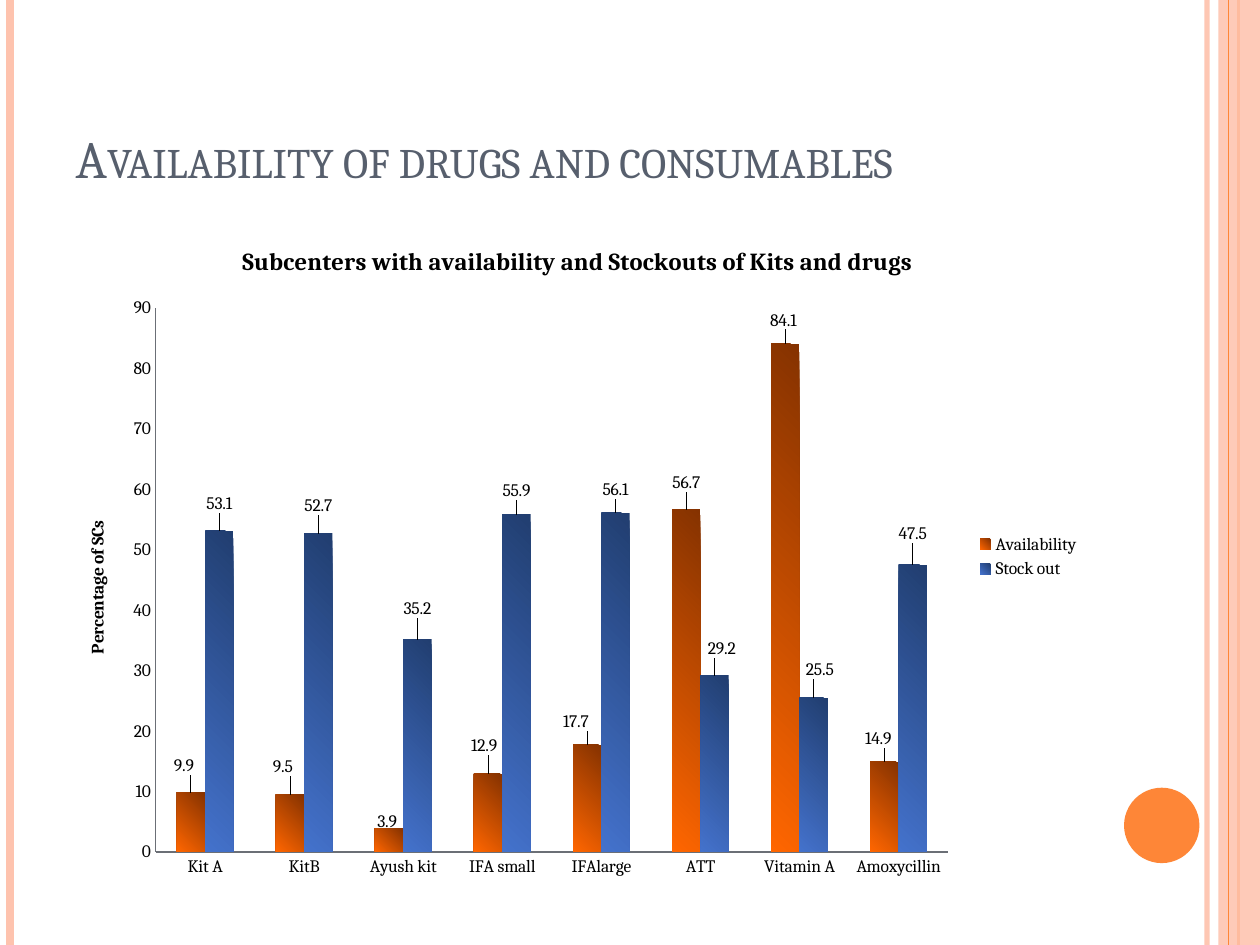
from lxml import etree
from pptx import Presentation
from pptx.chart.data import CategoryChartData
from pptx.dml.color import RGBColor
from pptx.enum.chart import XL_CHART_TYPE, XL_LABEL_POSITION, XL_LEGEND_POSITION, XL_TICK_MARK
from pptx.enum.shapes import MSO_CONNECTOR, MSO_SHAPE
from pptx.enum.text import MSO_ANCHOR, PP_ALIGN
from pptx.oxml import parse_xml
from pptx.oxml.ns import qn
from pptx.util import Cm, Pt

COLUMNS = XL_CHART_TYPE.COLUMN_CLUSTERED
ABOVE_BAR = XL_LABEL_POSITION.OUTSIDE_END
LEGEND_RIGHT = XL_LEGEND_POSITION.RIGHT
NO_TICK = XL_TICK_MARK.NONE
NS_C = "http://schemas.openxmlformats.org/drawingml/2006/chart"
NS_A = "http://schemas.openxmlformats.org/drawingml/2006/main"

# Content
FONT = "Cambria"
TITLE = "Availability of drugs and consumables"
CHART_TITLE = "Subcenters with availability and Stockouts of Kits and drugs"
AXIS_TITLE = "Percentage of SCs"
KITS = ["Kit A", "KitB", "Ayush kit", "IFA small", "IFAlarge", "ATT", "Vitamin A", "Amoxycillin"]
# Label shifts are (right, down) in percent of the chart's width and height
SERIES = [
    {"name": "Availability", "gradient": ("bright orange", "dark orange"),
     "values": [9.9, 9.5, 3.9, 12.9, 17.7, 56.7, 84.1, 14.9],
     "shifts": [(-0.7, -1.8), (-0.7, -2), (-0.2, 1.2), (-0.4, -2),
                (-1.1, -1.3), (0, -1.8), (-0.2, -1.3), (-0.6, -1.3)]},
    {"name": "Stock out", "gradient": ("bright blue", "dark blue"),
     "values": [53.1, 52.7, 35.2, 55.9, 56.1, 29.2, 25.5, 47.5],
     "shifts": [(0, -1.9), (0, -2), (0, -2.4), (0, -1.3),
                (0, -1.2), (0.7, -1.8), (0.6, -2), (0, -2.4)]},
]
COLORS = {
    "peach": "FEC3AE", "orange": "FE8637", "title": "575F6D", "text": "000000", "axis": "6B6F76",
    "bright orange": "FF6600", "dark orange": "853200",
    "bright blue": "4472CC", "dark blue": "213E70",
}
# Vertical rules: x in cm, colour, width in points, opacity in percent
RULES = [
    (24.33, "peach", 3, 93),
    (0.2, "peach", 4.5, 100),
    (24.97, "orange", 1.5, 100),
    (24.77, "orange", 0.75, 100),
]
SLIDE_W, SLIDE_H = 25.4, 19.05


def color(key):
    return RGBColor.from_string(COLORS[key])


def set_opacity(element, percent):
    for rgb in element.iter(qn("a:srgbClr")):
        etree.SubElement(rgb, qn("a:alpha"), val=str(percent * 1000))


def add_rule(slide, x, key, width, opacity):
    rule = slide.shapes.add_connector(MSO_CONNECTOR.STRAIGHT, Cm(x), 0, Cm(x), Cm(SLIDE_H))
    rule.line.color.rgb = color(key)
    rule.line.width = Pt(width)
    props = rule.line._get_or_add_ln().getparent()
    if opacity < 100:
        set_opacity(props, opacity)
    etree.SubElement(props, qn("a:effectLst"))


def add_plain_shape(slide, kind, key, *box):
    shape = slide.shapes.add_shape(kind, *(Cm(v) for v in box))
    shape.shadow.inherit = False
    shape.fill.solid()
    shape.fill.fore_color.rgb = color(key)
    shape.line.fill.background()
    return shape


def layout_xml(**settings):
    items = "".join(f'<c:{tag} val="{value}"/>' for tag, value in settings.items())
    return parse_xml(f'<c:layout xmlns:c="{NS_C}"><c:manualLayout>{items}</c:manualLayout></c:layout>')


def corner_gradient(inner, outer):
    """Circular gradient spreading from the bottom left corner."""
    return parse_xml(
        f'<a:gradFill xmlns:a="{NS_A}" rotWithShape="1"><a:gsLst>'
        f'<a:gs pos="0"><a:srgbClr val="{COLORS[inner]}"/></a:gs>'
        f'<a:gs pos="100000"><a:srgbClr val="{COLORS[outer]}"/></a:gs></a:gsLst>'
        '<a:path path="circle"><a:fillToRect t="100000" r="100000"/></a:path></a:gradFill>')


def write_heading(text_frame, text, size):
    run = text_frame.paragraphs[0].add_run()
    run.text = text
    run.font.name, run.font.size, run.font.bold = FONT, Pt(size), True
    run.font.color.rgb = color("text")


def style_series(series, content):
    fill = series.format.fill
    fill.solid()
    solid = next(series._element.iter(qn("a:solidFill")))
    solid.getparent().replace(solid, corner_gradient(*content["gradient"]))
    series.invert_if_negative = False
    for index, (right, down) in enumerate(content["shifts"]):
        series.points[index].data_label.position = ABOVE_BAR
    for label, (right, down) in zip(series._element.iter(qn("c:dLbl")), content["shifts"]):
        label.find(qn("c:idx")).addnext(layout_xml(x=right / 100, y=down / 100))


prs = Presentation()
prs.slide_width, prs.slide_height = Cm(SLIDE_W), Cm(SLIDE_H)
slide = prs.slides.add_slide(prs.slide_layouts[5])

# Side decoration
for rule in RULES[:3]:
    add_rule(slide, *rule)
side_band = add_plain_shape(slide, MSO_SHAPE.RECTANGLE, "peach", 24.56, 0, 0.84, SLIDE_H)
set_opacity(side_band.fill._xPr, 87)
add_rule(slide, *RULES[3])
add_plain_shape(slide, MSO_SHAPE.OVAL, "orange", 22.66, 15.88, 1.52, 1.52)

# Title
title = slide.shapes.title
title.left, title.top, title.width, title.height = Cm(1.27), Cm(0.76), Cm(20.75), Cm(3.18)
title.text_frame.vertical_anchor = MSO_ANCHOR.BOTTOM
title_line = title.text_frame.paragraphs[0]
title_line.alignment = PP_ALIGN.LEFT
title_run = title_line.add_run()
title_run.text = TITLE
title_run.font.name, title_run.font.size = FONT, Pt(30)
title_run.font.color.rgb = color("title")
title_run._r.get_or_add_rPr().set("cap", "small")

# Chart
data = CategoryChartData()
data.categories = KITS
for content in SERIES:
    data.add_series(content["name"], content["values"])
chart = slide.shapes.add_chart(COLUMNS, Cm(1.27), Cm(4.45), Cm(20.75), Cm(13.54), data).chart
chart.font.name, chart.font.size = FONT, Pt(10)
chart.font.color.rgb = color("text")
chart.has_title = True
write_heading(chart.chart_title.text_frame, CHART_TITLE, 14)
chart.has_legend = True
chart.legend.position = LEGEND_RIGHT
chart.legend.include_in_layout = False

# Axes
kit_axis, share_axis = chart.category_axis, chart.value_axis
for axis in (kit_axis, share_axis):
    axis.major_tick_mark = axis.minor_tick_mark = NO_TICK
    axis.has_major_gridlines = False
    axis.format.line.color.rgb = color("axis")
share_axis.minimum_scale, share_axis.maximum_scale, share_axis.major_unit = 0, 90, 10
share_axis.tick_labels.number_format = "0"
share_axis.tick_labels.number_format_is_linked = False
share_axis.has_title = True
write_heading(share_axis.axis_title.text_frame, AXIS_TITLE, 10)

# Bars and labels
plot = chart.plots[0]
plot.vary_by_categories = False
plot.gap_width, plot.overlap = 150, 0
for series, content in zip(plot.series, SERIES):
    style_series(series, content)

plot_area = plot._element.getparent()
for old_layout in plot_area.findall(qn("c:layout")):
    plot_area.remove(old_layout)
plot_area.insert(0, layout_xml(layoutTarget="inner", xMode="edge", yMode="edge",
                               x=0.09, y=0.13, w=0.77, h=0.81))

prs.save("out.pptx")
